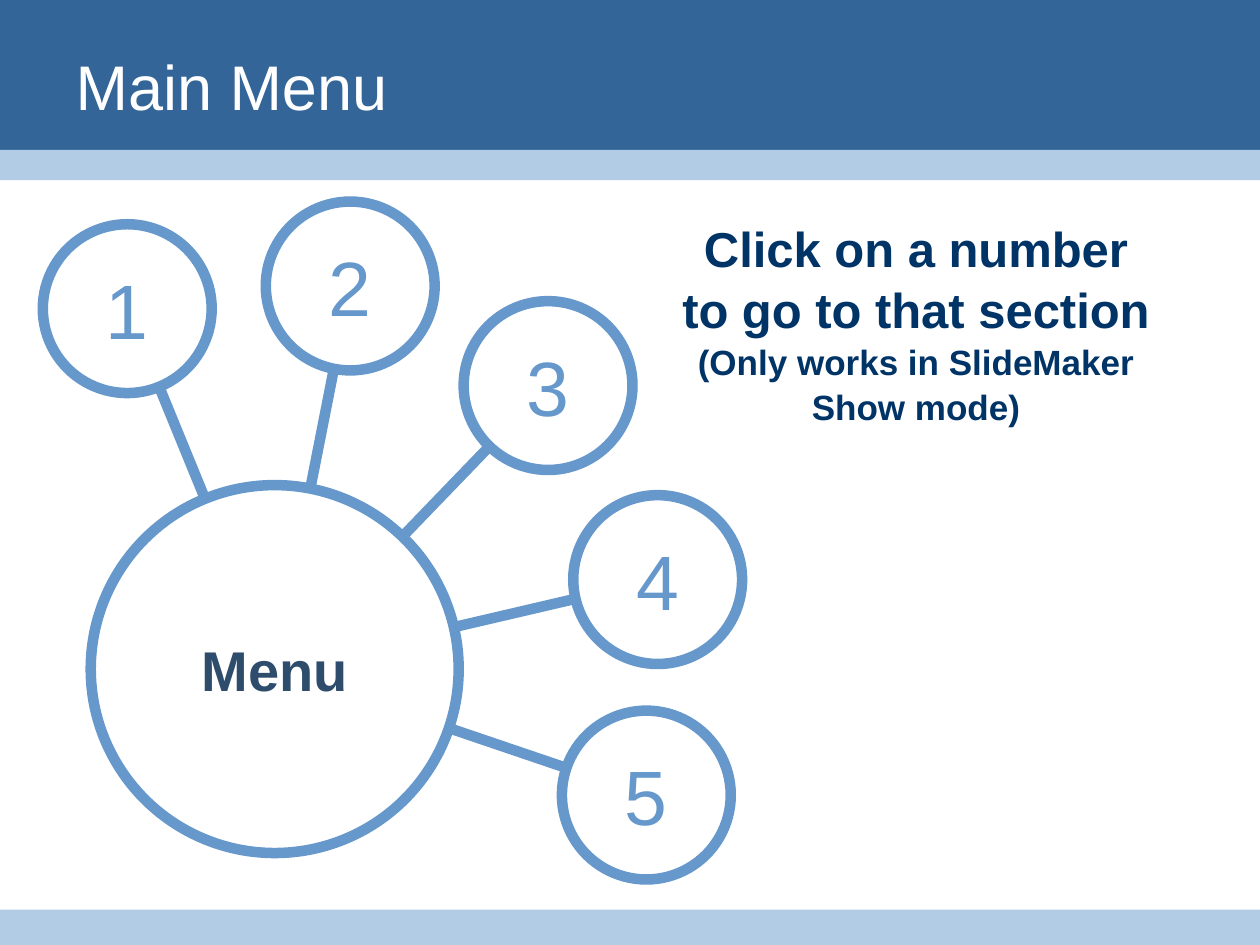
from dataclasses import dataclass
from math import hypot

from lxml.etree import SubElement
from pptx import Presentation
from pptx.dml.color import RGBColor as RGB
from pptx.enum.shapes import MSO_CONNECTOR as CONNECTOR, MSO_SHAPE as SHAPE
from pptx.enum.text import MSO_ANCHOR as ANCHOR, MSO_AUTO_SIZE as AUTO_SIZE, PP_ALIGN as ALIGN
from pptx.oxml.ns import qn
from pptx.util import Inches, Pt


@dataclass(frozen=True)
class Theme:
    font: str = "Arial"
    white: RGB = RGB(0xFF, 0xFF, 0xFF)
    header: RGB = RGB(0x33, 0x65, 0x99)
    band: RGB = RGB(0xB3, 0xCC, 0xE6)
    outline: RGB = RGB(0x66, 0x98, 0xCC)
    hub_text: RGB = RGB(0x2E, 0x4C, 0x6B)
    note_text: RGB = RGB(0x00, 0x33, 0x66)
    title_size: int = 36
    number_size: int = 44
    hub_size: int = 32
    note_size: int = 28
    hint_size: int = 20
    line_width: int = 6


THEME = Theme()
HUB_CENTER, HUB_RADIUS = (2.18, 5.31), 1.46
NODE_RADIUS = 0.67
NODE_CENTERS = [(1.01, 2.45), (2.78, 2.27), (4.35, 3.06), (5.22, 4.6), (5.13, 6.31)]


def format_paragraph(paragraph, size, color, align, bold=False):
    paragraph.alignment = align
    for run in paragraph.runs:
        run.font.name = THEME.font
        run.font.size = Pt(size)
        run.font.bold = bold
        run.font.color.rgb = color


def add_band(slide, top, height, color):
    band = slide.shapes.add_shape(
        SHAPE.RECTANGLE, 0, Inches(top), Inches(10), Inches(height))
    band.shadow.inherit = False
    band.fill.solid()
    band.fill.fore_color.rgb = color
    band.line.fill.background()


def set_title(slide, text):
    title = slide.shapes.title
    title.left, title.top = Inches(0.5), Inches(0.28)
    title.width, title.height = Inches(9.07), Inches(0.79)
    title.text_frame.text = text
    title.text_frame.vertical_anchor = ANCHOR.MIDDLE
    format_paragraph(title.text_frame.paragraphs[0], THEME.title_size, THEME.white, ALIGN.LEFT)
    title.element.getparent().append(title.element)


def add_circle(slide, center, radius, text, size, color, bold=False):
    x, y = center
    circle = slide.shapes.add_shape(
        SHAPE.OVAL, Inches(x - radius), Inches(y - radius), Inches(2 * radius), Inches(2 * radius))
    circle.shadow.inherit = False
    circle.fill.solid()
    circle.fill.fore_color.rgb = THEME.white
    circle.line.color.rgb = THEME.outline
    circle.line.width = Pt(THEME.line_width)
    frame = circle.text_frame
    frame.margin_left = frame.margin_top = frame.margin_right = frame.margin_bottom = 0
    frame.vertical_anchor = ANCHOR.MIDDLE
    frame.text = text
    format_paragraph(frame.paragraphs[0], size, color, ALIGN.CENTER, bold)


def add_spoke(slide, node_center):
    """Join the rims of the hub and a node along the line between their centers."""
    (hub_x, hub_y), (node_x, node_y) = HUB_CENTER, node_center
    distance = hypot(node_x - hub_x, node_y - hub_y)
    unit_x, unit_y = (node_x - hub_x) / distance, (node_y - hub_y) / distance
    reach = distance - NODE_RADIUS
    spoke = slide.shapes.add_connector(
        CONNECTOR.STRAIGHT,
        Inches(hub_x + unit_x * HUB_RADIUS), Inches(hub_y + unit_y * HUB_RADIUS),
        Inches(hub_x + unit_x * reach), Inches(hub_y + unit_y * reach))
    spoke.line.color.rgb = THEME.outline
    spoke.line.width = Pt(THEME.line_width)
    SubElement(spoke.element.spPr, qn("a:effectLst"))


def add_note(slide, lines):
    box = slide.shapes.add_textbox(Inches(5.28), Inches(1.66), Inches(3.98), Inches(1.7))
    frame = box.text_frame
    frame.word_wrap = True
    frame.auto_size = AUTO_SIZE.SHAPE_TO_FIT_TEXT
    frame.text = "\n".join(text for text, _ in lines)
    for paragraph, (_, size) in zip(frame.paragraphs, lines):
        paragraph.line_spacing = 1.05
        format_paragraph(paragraph, size, THEME.note_text, ALIGN.CENTER, bold=True)


def main():
    presentation = Presentation()
    presentation.slide_width, presentation.slide_height = Inches(10), Inches(7.5)
    slide = presentation.slides.add_slide(presentation.slide_layouts.get_by_name("Title Only"))

    add_band(slide, 0, 1.31, THEME.header)
    add_band(slide, 1.19, 0.24, THEME.band)
    add_band(slide, 7.22, 0.28, THEME.band)
    set_title(slide, "Main Menu")

    for number, center in enumerate(NODE_CENTERS, start=1):
        add_circle(slide, center, NODE_RADIUS, str(number), THEME.number_size, THEME.outline)
        add_spoke(slide, center)
    add_circle(slide, HUB_CENTER, HUB_RADIUS, "Menu", THEME.hub_size, THEME.hub_text, bold=True)

    add_note(slide, [
        ("Click on a number to go to that section", THEME.note_size),
        ("(Only works in SlideMaker Show mode)", THEME.hint_size),
    ])
    presentation.save("out.pptx")


if __name__ == "__main__":
    main()
